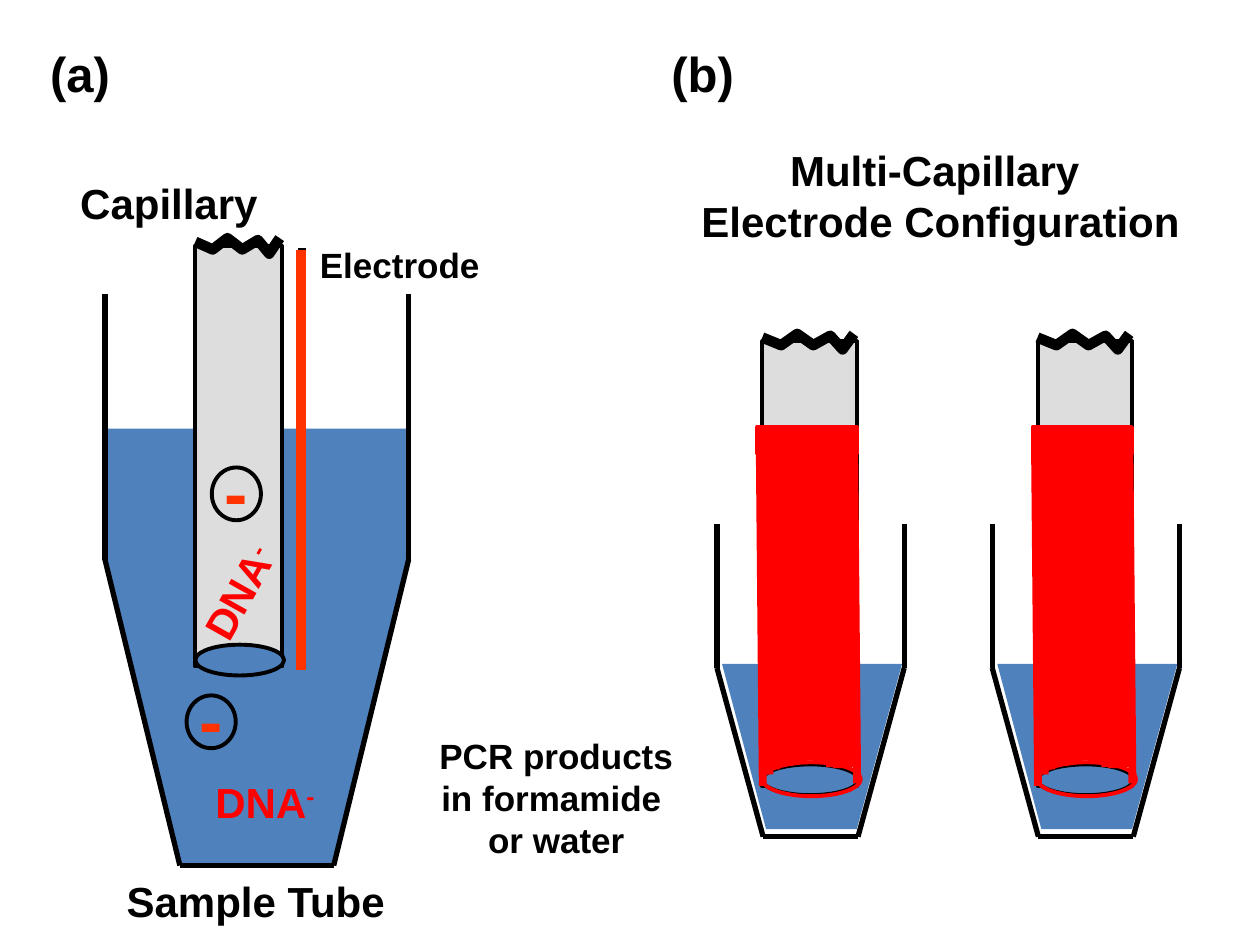
from lxml import etree
from pptx import Presentation
from pptx.dml.color import RGBColor
from pptx.enum import shapes as kinds, text
from pptx.oxml import ns
from pptx.util import Pt

COLOURS = {"black": "000000", "water": "4F81BD", "glass": "DDDDDD",
           "red": "FF0000", "orange": "FF3300"}
WIRE_TOPS = (67.7, 61.2, 58.3, 56.9, 56.2, 54.7, 54, 53.3,
             54, 54, 56.9, 57.6, 57.6, 56.9, 66.2)
JAGGED_EDGE = ((0, -2.2), (0.2, 2.2), (0.37, -4.3), (0.54, 2.2),
               (0.72, -3.2), (0.85, 4.6), (0.97, -4.3))


def colour(name):
    """Return the RGB colour of a given name."""
    return RGBColor.from_string(COLOURS[name])


def style(shape, fill=None, line=None, width=2.25):
    """Set the fill and outline of a shape and remove its shadow."""
    shape.shadow.inherit = False
    if fill:
        shape.fill.solid()
        shape.fill.fore_color.rgb = colour(fill)
    else:
        shape.fill.background()
    if line:
        shape.line.color.rgb = colour(line)
        shape.line.width = Pt(width)
    else:
        shape.line.fill.background()


def add_preset(shapes, kind, box, **formats):
    """Add a styled preset shape in a box."""
    shape = shapes.add_shape(kind, *map(Pt, box))
    style(shape, **formats)


def add_outline(shapes, points, close, **formats):
    """Add a styled freeform through the points."""
    start, *rest = [(Pt(x), Pt(y)) for x, y in points]
    builder = shapes.build_freeform(*start)
    builder.add_line_segments(rest, close=close)
    style(builder.convert_to_shape(), **formats)


def add_line(shapes, start, end, name, width):
    """Add a straight line without a shadow."""
    line = shapes.add_connector(kinds.MSO_CONNECTOR.STRAIGHT, *map(Pt, (*start, *end)))
    line.line.color.rgb = colour(name)
    line.line.width = Pt(width)
    etree.SubElement(line._element.spPr, ns.qn("a:effectLst"))


def add_label(shapes, box, lines, size, name="black", centred=True,
              wrap=True, superscript=None, rotation=0):
    """Add bold text in a box, one paragraph per line."""
    label = shapes.add_textbox(*map(Pt, box))
    label.rotation = rotation
    frame = label.text_frame
    frame.word_wrap = wrap
    formats = {"name": "Arial", "size": Pt(size), "bold": True}
    for index, words in enumerate(lines):
        paragraph = frame.paragraphs[0] if index == 0 else frame.add_paragraph()
        paragraph.alignment = text.PP_ALIGN.CENTER if centred else text.PP_ALIGN.LEFT
        for part in filter(None, (words, superscript)):
            run = paragraph.add_run()
            run.text = part
            for key, value in formats.items():
                setattr(run.font, key, value)
            run.font.color.rgb = colour(name)
            if part == superscript:
                run._r.get_or_add_rPr().set("baseline", "30000")


def add_walls(shapes, left, top, width, height, shoulder, inset):
    """Draw the open tube that tapers below its shoulder."""
    right, bottom = left + width, top + height
    corners = ((left, top), (left, top + shoulder), (left + inset, bottom),
               (right - inset, bottom), (right, top + shoulder), (right, top))
    for start, end in zip(corners, corners[1:]):
        add_line(shapes, start, end, "black", 3)


def add_capillary(shapes, left, top, width, height):
    """Draw a glass capillary with a jagged top and an open end."""
    add_preset(shapes, kinds.MSO_SHAPE.RECTANGLE, (left, top, width, height),
               fill="glass", line="black")
    add_preset(shapes, kinds.MSO_SHAPE.OVAL,
               (left, top + height - 12.5, width + 1, 17.6), fill="water", line="black")
    edge = [(left + width * x, top + y) for x, y in JAGGED_EDGE]
    add_outline(shapes, edge, False, line="black", width=6)


def add_charge(shapes, left, top):
    """Draw a circled minus sign."""
    add_preset(shapes, kinds.MSO_SHAPE.OVAL, (left, top, 28.1, 30.2), line="black")
    add_label(shapes, (left - 24.2, top - 14.4, 76.3, 52.6), ["-"], 40, "orange")


def add_sample_tube(slide, left, top):
    """Draw the single tube with its capillary, electrode and labels."""
    shapes = slide.shapes.add_group_shape().shapes
    add_preset(shapes, kinds.MSO_SHAPE.RECTANGLE, (left, top + 147, 173.5, 73.4),
               fill="water")
    water = ((0, 220.2), (43, 396.6), (131, 396.6), (174, 220.2))
    add_outline(shapes, [(left + x, top + y) for x, y in water], True, fill="water")
    add_walls(shapes, left, top + 69.8, 173.5, 326.8, 152, 42.8)
    add_label(shapes, (left - 13.2, top + 398.8, 198.7, 34.6), ["Sample Tube"], 24)
    add_label(shapes, (left + 56, top + 342, 72.7, 33.8), ["DNA"], 24, "red",
              centred=False, superscript="-")
    add_charge(shapes, left + 46.6, top + 299.4)
    for x, y, name, width in ((112.8, 43.8, "black", 4.5), (112.1, 44.6, "orange", 6)):
        add_line(shapes, (left + x, top + y), (left + x, top + y + 240.5), name, width)
    add_label(shapes, (left + 115.7, top + 37.4, 118.8, 31.7), ["Electrode"], 20,
              centred=False)
    add_label(shapes, (left - 32.6, top, 138.2, 34.6), ["Capillary"], 24)
    add_capillary(shapes, left + 51.6, top + 42.4, 49.7, 240.5)
    add_label(shapes, (left + 38.6, top + 221, 75.6, 33.1), ["DNA"], 24, "red",
              centred=False, superscript="-", rotation=299.4)
    add_charge(shapes, left + 61, top + 169.1)


def add_wrapped_tube(slide, left, top):
    """Draw a small tube whose capillary is sheathed by electrode wires."""
    shapes = slide.shapes.add_group_shape().shapes
    water = ((2.9, 188.6), (28.1, 283), (79.9, 283), (105.8, 188.6))
    add_outline(shapes, [(left + x, top + y) for x, y in water], True, fill="water")
    add_capillary(shapes, left + 25.9, top + 4.3, 54, 254.2)
    add_preset(shapes, kinds.MSO_SHAPE.OVAL, (left + 25.9, top + 244.8, 56.2, 19.4),
               line="red")
    for index, wire_top in enumerate(WIRE_TOPS):
        x, y = left + 24.5 + 3.85 * index, top + wire_top
        add_line(shapes, (x + 1.7, y + 190.6), (x, y), "red", 4.5)
    add_walls(shapes, left, top + 108.7, 107, 178.6, 82.2, 26.4)
    add_preset(shapes, kinds.MSO_SHAPE.RECTANGLE, (left + 23, top + 53.2, 56.9, 15.3),
               fill="red", line="red", width=2)


def main():
    """Build and save the slide."""
    presentation = Presentation()
    presentation.slide_width, presentation.slide_height = Pt(720), Pt(540)
    slide = presentation.slides.add_slide(presentation.slide_layouts[6])
    add_sample_tube(slide, 60, 98)
    add_label(slide.shapes, (234.7, 416.2, 166.3, 79.9),
              ["PCR products in formamide ", "or water"], 20)
    for left, words in ((21.6, "(a)"), (376.6, "(b)")):
        add_label(slide.shapes, (left, 21.6, 50, 41), [words], 28,
                  centred=False, wrap=False)
    add_label(slide.shapes, (388.8, 79.2, 297.4, 65.5),
              ["Multi-Capillary ", "Electrode Configuration"], 24)
    for index in range(2):
        add_wrapped_tube(slide, 409.7 + 157.3 * index, 190.8)
    presentation.save("out.pptx")


if __name__ == "__main__":
    main()
